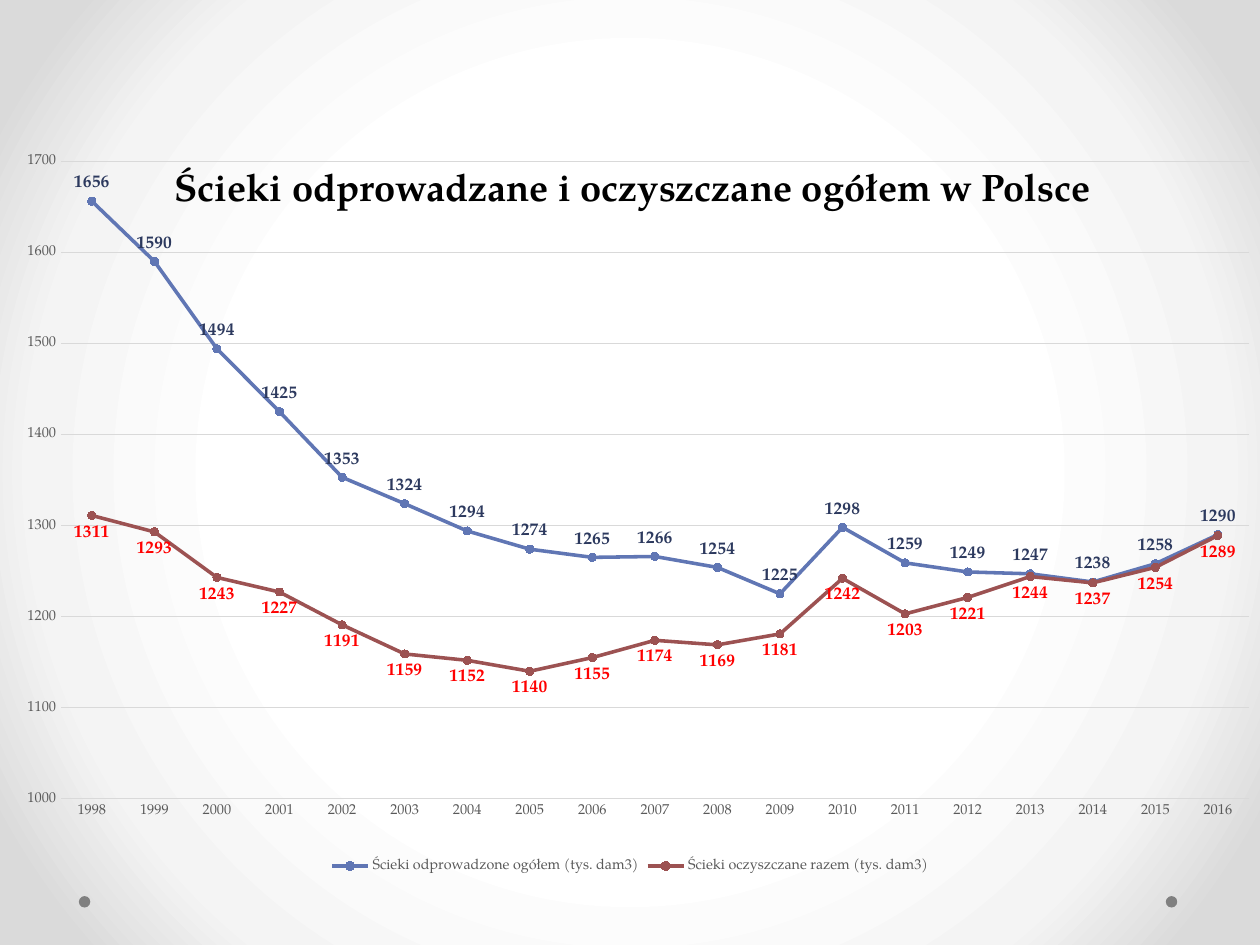
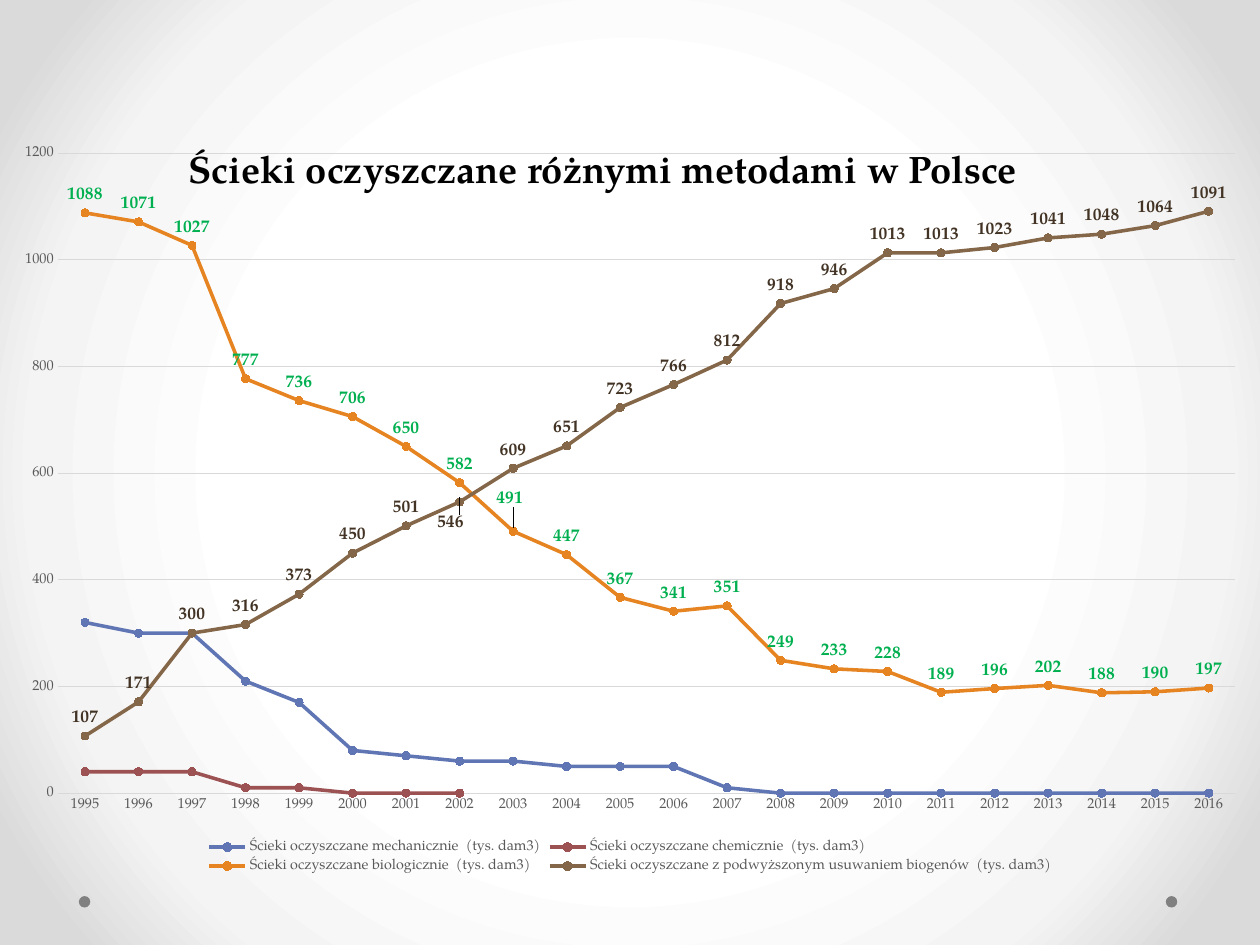
from dataclasses import dataclass, field

from lxml import etree
from pptx import Presentation
from pptx.chart.data import CategoryChartData
from pptx.dml.color import RGBColor
from pptx.enum.chart import (XL_CHART_TYPE, XL_LABEL_POSITION,
                             XL_LEGEND_POSITION, XL_MARKER_STYLE, XL_TICK_MARK)
from pptx.enum.shapes import MSO_SHAPE
from pptx.oxml import parse_xml
from pptx.oxml.ns import nsdecls, qn
from pptx.util import Inches, Pt

LINES = XL_CHART_TYPE.LINE_MARKERS
ABOVE, BELOW = XL_LABEL_POSITION.ABOVE, XL_LABEL_POSITION.BELOW
BOTTOM = XL_LEGEND_POSITION.BOTTOM
CIRCLE = XL_MARKER_STYLE.CIRCLE
NO_TICK = XL_TICK_MARK.NONE
OVAL = MSO_SHAPE.OVAL

FACE = "TeX Gyre Pagella"
BLACK, TEXT, GRID, DOT = "000000", "595959", "D9D9D9", "808080"
BLUE, RED, ORANGE, BROWN = "6076B4", "9C5252", "E68422", "846648"
GLOW = ((50, "FFFFFF"), (76, "F4F4F4"), (92, "DADADA"))
DOTS = (0.69, 10.2)
# 28 by 21 cm
WIDE, HIGH = 28 / 2.54, 21 / 2.54
NO_LEADER = (
    f'<c:extLst {nsdecls("c")}>'
    '<c:ext uri="{CE6537A1-D6FC-4f65-9D91-7224C49458BB}" xmlns:c15='
    '"http://schemas.microsoft.com/office/drawing/2012/chart">'
    '<c15:showLeaderLines val="0"/></c:ext></c:extLst>')


@dataclass
class Line:
    name: str
    color: str
    vals: list[int | None]
    ink: str = ""
    place: XL_LABEL_POSITION = ABOVE
    # point index -> label offset in inches
    moved: dict[int, tuple[float, float]] = field(default_factory=dict)


@dataclass
class Page:
    title: str
    box: tuple[float, float, float]
    top: float
    tall: float
    # left, top, width, height in inches within the chart
    plot: tuple[float, float, float, float]
    years: range
    scale: tuple[int, int, int]
    lines: list[Line]


PAGES = [
    Page("Ścieki odprowadzane i oczyszczane ogółem w Polsce",
         (1.43, 1.38, 9.2), 1.27, 6.41, (0.53, 0.14, 10.4, 5.58),
         range(1998, 2017), (1000, 1700, 100), [
             Line("Ścieki odprowadzone ogółem (tys. dam3)", BLUE,
                  [1656, 1590, 1494, 1425, 1353, 1324, 1294, 1274, 1265, 1266,
                   1254, 1225, 1298, 1259, 1249, 1247, 1238, 1258, 1290],
                  "2C395E"),
             Line("Ścieki oczyszczane razem (tys. dam3)", RED,
                  [1311, 1293, 1243, 1227, 1191, 1159, 1152, 1140, 1155, 1174,
                   1169, 1181, 1242, 1203, 1221, 1244, 1237, 1254, 1289],
                  "FF0000", BELOW)]),
    Page("Ścieki oczyszczane różnymi metodami w Polsce",
         (1.55, 1.22, 7.95), 1.14, 6.54, (0.51, 0.2, 10.3, 5.6),
         range(1995, 2017), (0, 1200, 200), [
             Line("Ścieki oczyszczane mechanicznie  (tys. dam3)", BLUE,
                  [320, 300, 300, 210, 170, 80, 70, 60, 60, 50, 50, 50, 10]
                  + [0] * 9),
             Line("Ścieki oczyszczane chemicznie  (tys. dam3)", RED,
                  [40, 40, 40, 10, 10, 0, 0, 0] + [None] * 14),
             Line("Ścieki oczyszczane biologicznie  (tys. dam3)", ORANGE,
                  [1088, 1071, 1027, 777, 736, 706, 650, 582, 491, 447, 367,
                   341, 351, 249, 233, 228, 189, 196, 202, 188, 190, 197],
                  "00B050", moved={8: (-0.03, -0.13)}),
             Line("Ścieki oczyszczane z podwyższonym usuwaniem biogenów"
                  "  (tys. dam3)", BROWN,
                  [107, 171, 300, 316, 373, 450, 501, 546, 609, 651, 723,
                   766, 812, 918, 946, 1013, 1013, 1023, 1041, 1048, 1064,
                   1091],
                  "423324", moved={7: (-0.08, 0.34)})]),
]


def paint(fill, color: str) -> None:
    fill.solid()
    fill.fore_color.rgb = RGBColor.from_string(color)


def style(font, size: float, color: str, bold: bool = False) -> None:
    font.name, font.size, font.bold = FACE, Pt(size), bold
    paint(font.fill, color)


def write(slide, text: str, box: tuple[float, float, float], *,
          size: float, color: str = BLACK, bold: bool = False) -> None:
    left, top, width = map(Inches, box)
    frame = slide.shapes.add_textbox(left, top, width, Inches(0.5)).text_frame
    frame.word_wrap = True
    run = frame.paragraphs[0].add_run()
    run.text = text
    style(run.font, size, color, bold)


def set_glow(master) -> None:
    """Give the master a round gradient that darkens towards the corners."""
    master.background.fill.gradient()
    grad = master.element.cSld.find(".//" + qn("a:gradFill"))
    for child in list(grad):
        grad.remove(child)
    stops = etree.SubElement(grad, qn("a:gsLst"))
    for part, color in GLOW:
        stop = etree.SubElement(stops, qn("a:gs"), pos=str(part * 1000))
        etree.SubElement(stop, qn("a:srgbClr"), val=color)
    way = etree.SubElement(grad, qn("a:path"), path="circle")
    etree.SubElement(way, qn("a:fillToRect"),
                     {side: "50000" for side in "ltrb"})


def add_dots(slide) -> None:
    for left in DOTS:
        dot = slide.shapes.add_shape(OVAL, Inches(left), Inches(7.84),
                                     Inches(0.1), Inches(0.1))
        dot.shadow.inherit = False
        paint(dot.fill, DOT)
        dot.line.fill.background()


def layout(**parts: float | str):
    """Build a manual chart layout from its named parts."""
    node = parse_xml(f"<c:layout {nsdecls('c')}><c:manualLayout/></c:layout>")
    for name, val in parts.items():
        etree.SubElement(node[0], qn("c:" + name), val=str(val))
    return node


def clear():
    return parse_xml(f"<c:spPr {nsdecls('c', 'a')}><a:noFill/>"
                     "<a:ln><a:noFill/></a:ln></c:spPr>")


def set_plot(chart, page: Page) -> None:
    """Place the plot and leave chart and plot without a fill."""
    left, top, width, height = page.plot
    body = chart.element.find(qn("c:chart"))
    body.addnext(clear())
    area = body.find(qn("c:plotArea"))
    for old in area.findall(qn("c:layout")):
        area.remove(old)
    area.insert(0, layout(layoutTarget="inner", xMode="edge", yMode="edge",
                          x=left / WIDE, y=top / page.tall,
                          w=width / WIDE, h=height / page.tall))
    area.append(clear())


def set_axes(chart, scale: tuple[int, int, int]) -> None:
    cats, vals = chart.category_axis, chart.value_axis
    for axis in (cats, vals):
        axis.major_tick_mark = axis.minor_tick_mark = NO_TICK
        style(axis.tick_labels.font, 9, TEXT)
    vals.minimum_scale, vals.maximum_scale, vals.major_unit = scale
    vals.tick_labels.number_format = "0"
    vals.tick_labels.number_format_is_linked = False
    vals.format.line.fill.background()
    cats.has_major_gridlines = False
    vals.has_major_gridlines = True
    for rule in (cats.format.line, vals.major_gridlines.format.line):
        rule.width = Pt(0.75)
        paint(rule.fill, GRID)


def set_line(series, line: Line, tall: float) -> None:
    series.smooth = False
    series.format.line.width = Pt(2.25)
    paint(series.format.line.fill, line.color)
    mark = series.marker
    mark.style, mark.size = CIRCLE, 5
    paint(mark.format.fill, line.color)
    paint(mark.format.line.fill, line.color)
    if not line.ink:
        return
    labels = series.data_labels
    labels.show_value = True
    labels.position = line.place
    style(labels.font, 11, line.ink, True)
    group = series._element.find(qn("c:dLbls"))
    for index, (right, down) in line.moved.items():
        label = series.points[index].data_label
        style(label.font, 11, line.ink, True)
        label.position = line.place
        node = group.find(qn("c:dLbl"))
        node.find(qn("c:idx")).addnext(layout(x=right / WIDE, y=down / tall))
    group.append(parse_xml(NO_LEADER))


def add_lines(slide, page: Page) -> None:
    data = CategoryChartData(number_format="0")
    data.categories = [str(year) for year in page.years]
    for line in page.lines:
        data.add_series(line.name, line.vals)
    chart = slide.shapes.add_chart(LINES, 0, Inches(page.top), Inches(WIDE),
                                   Inches(page.tall), data).chart
    style(chart.font, 10, BLACK)
    chart.has_title = False
    chart.has_legend = True
    chart.legend.position = BOTTOM
    chart.legend.include_in_layout = False
    style(chart.legend.font, 9, TEXT)
    chart.plots[0].vary_by_categories = False
    set_plot(chart, page)
    set_axes(chart, page.scale)
    for series, line in zip(chart.plots[0].series, page.lines):
        set_line(series, line, page.tall)


def main() -> None:
    deck = Presentation()
    deck.slide_width, deck.slide_height = Inches(WIDE), Inches(HIGH)
    set_glow(deck.slide_master)
    for page in PAGES:
        slide = deck.slides.add_slide(deck.slide_layouts[6])
        add_dots(slide)
        add_lines(slide, page)
        write(slide, page.title, page.box, size=24, bold=True)
    deck.save("out.pptx")


if __name__ == "__main__":
    main()
